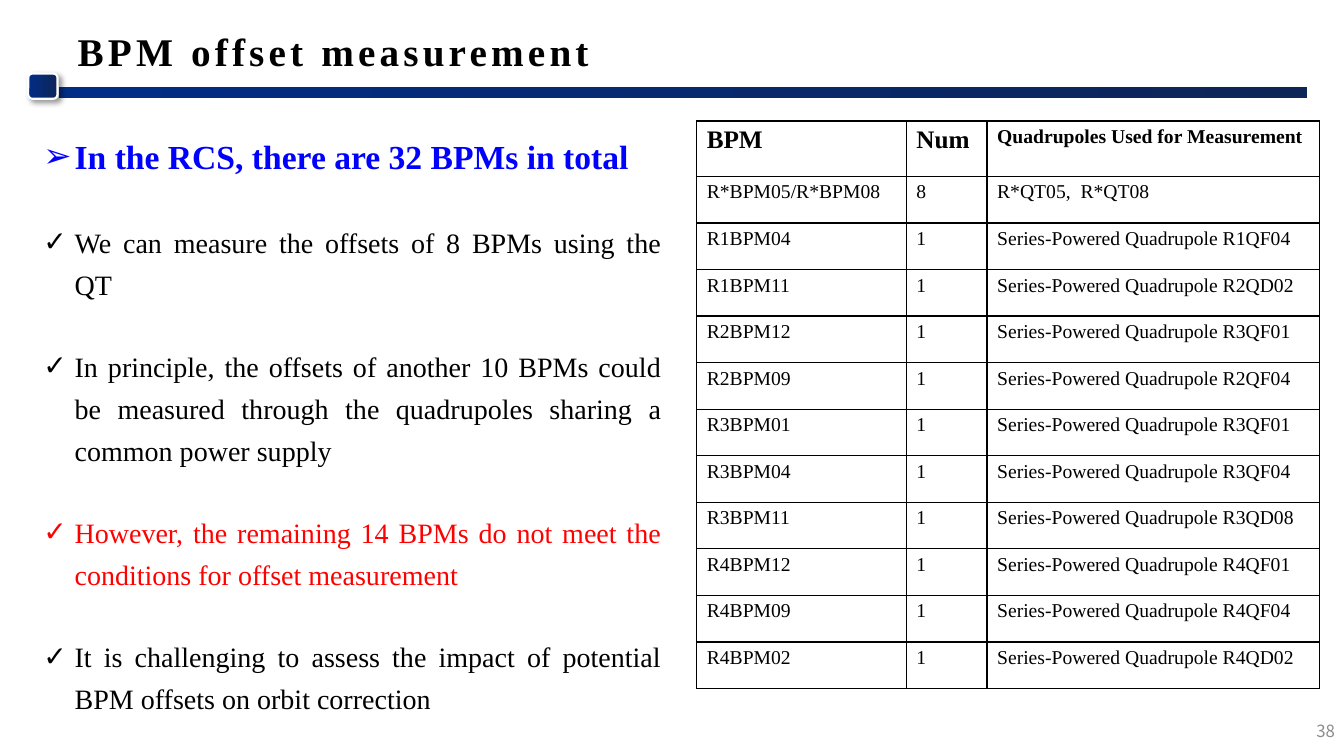
"""Build the BPM offset measurement slide."""
from lxml import etree
from pptx import Presentation
from pptx.dml.color import RGBColor
from pptx.enum.shapes import MSO_SHAPE
from pptx.enum.text import MSO_ANCHOR, MSO_AUTO_SIZE, PP_ALIGN
from pptx.oxml import parse_xml
from pptx.oxml.ns import nsdecls, qn
from pptx.util import Inches, Pt

RECTANGLE, ROUNDED = MSO_SHAPE.RECTANGLE, MSO_SHAPE.ROUNDED_RECTANGLE
TOP, MIDDLE = MSO_ANCHOR.TOP, MSO_ANCHOR.MIDDLE
LEFT, RIGHT, JUSTIFY = PP_ALIGN.LEFT, PP_ALIGN.RIGHT, PP_ALIGN.JUSTIFY
NO_FIT = MSO_AUTO_SIZE.NONE
SERIF, SANS = "Times New Roman", "Noto Sans CJK SC"
BLACK, BLUE, RED = "000000", "0000FF", "FF0000"


def color(code):
    return RGBColor.from_string(code)


def add_run(para, text, size, code=BLACK, bold=False, face=SERIF):
    span = para.add_run()
    span.text = text
    span.font.name = face
    span.font.size = Pt(size)
    span.font.bold = bold
    span.font.color.rgb = color(code)
    return span


deck = Presentation()
deck.slide_width, deck.slide_height = Inches(13.33), Inches(7.5)
page = deck.slides.add_slide(deck.slide_layouts[1])
title, body = page.placeholders

# (shape, left, top, width, height, line width)
header_parts = [
    (RECTANGLE, 0.58, 0.86, 12.39, 0.12, 1),
    (ROUNDED, 0.28, 0.73, 0.29, 0.25, 1.5),
]
for preset, left, top, width, height, line_width in header_parts:
    part = page.shapes.add_shape(
        preset, Inches(left), Inches(top), Inches(width), Inches(height))
    part.shadow.inherit = False
    part.fill.gradient()
    part.fill.gradient_angle = 0
    for stop, position, code in zip(
            part.fill.gradient_stops, (0, 1), ("012D86", "0E2557")):
        stop.position = position
        stop.color.rgb = color(code)
    part.line.color.rgb = color("FFFFFF")
    part.line.width = Pt(line_width)
    if preset == ROUNDED:
        effects = part._element.spPr.find(qn("a:effectLst"))
        effects.append(parse_xml(
            f'<a:outerShdw {nsdecls("a")} blurRad="{Pt(4)}" dist="{Pt(3)}" '
            'dir="2700000" algn="tl" rotWithShape="0"><a:srgbClr val="000000">'
            '<a:alpha val="40000"/></a:srgbClr></a:outerShdw>'))

title.left, title.top = Inches(0.67), Inches(0.19)
title.width, title.height = Inches(10.03), Inches(0.63)
title.text_frame.auto_size = NO_FIT
title.text_frame.vertical_anchor = MIDDLE
title_para = title.text_frame.paragraphs[0]
title_para.alignment = LEFT
title_span = add_run(title_para, "BPM offset measurement", 28, bold=True)
title_span.font._element.set("spc", "300")

points = [
    ("➢", "In the RCS, there are 32 BPMs in total", 24, BLUE, True),
    ("✓", "We can measure the offsets of 8 BPMs using the QT", 20, BLACK, False),
    ("✓", "In principle, the offsets of another 10 BPMs could be measured "
     "through the quadrupoles sharing a common power supply", 20, BLACK, False),
    ("✓", "However, the remaining 14 BPMs do not meet the conditions for "
     "offset measurement", 20, RED, False),
    ("✓", "It is challenging to assess the impact of potential BPM offsets "
     "on orbit correction", 20, BLACK, False),
]
body.left, body.top = Inches(0.33), Inches(1.2)
body.width, body.height = Inches(6.33), Inches(5.43)
frame = body.text_frame
frame.auto_size = NO_FIT
frame.vertical_anchor = TOP
for index, (bullet, text, size, code, bold) in enumerate(points):
    para = frame.add_paragraph() if index else frame.paragraphs[0]
    properties = para._p.get_or_add_pPr()
    properties.set("marL", str(Inches(0.31)))
    properties.set("indent", str(-Inches(0.31)))
    etree.SubElement(properties, qn("a:buChar")).set("char", bullet)
    para.alignment = JUSTIFY
    para.line_spacing = 1.25
    para.space_before = Pt(28.75 if index else 0)
    para.space_after = Pt(0)
    add_run(para, text, size, code, bold)

header = ("BPM", "Num", "Quadrupoles Used for Measurement")
series_powered = [
    ("R1BPM04", "R1QF04"), ("R1BPM11", "R2QD02"), ("R2BPM12", "R3QF01"),
    ("R2BPM09", "R2QF04"), ("R3BPM01", "R3QF01"), ("R3BPM04", "R3QF04"),
    ("R3BPM11", "R3QD08"), ("R4BPM12", "R4QF01"), ("R4BPM09", "R4QF04"),
    ("R4BPM02", "R4QD02"),
]
rows = [header, ("R*BPM05/R*BPM08", "8", "R*QT05,  R*QT08")]
rows += [(monitor, "1", f"Series-Powered Quadrupole {magnet}")
         for monitor, magnet in series_powered]
table = page.shapes.add_table(
    len(rows), len(header), Inches(6.91), Inches(1.2),
    Inches(6.18), Inches(5.63)).table
table.first_row = table.horz_banding = False
for column, width in zip(table.columns, (2.08, 0.8, 3.3)):
    column.width = Inches(width)
for row_index, values in enumerate(rows):
    is_header = row_index == 0
    table.rows[row_index].height = Inches(0.55 if is_header else 0.462)
    for column_index, value in enumerate(values):
        cell = table.cell(row_index, column_index)
        cell_properties = cell._tc.get_or_add_tcPr()
        for side in ("lnL", "lnR", "lnT", "lnB"):
            cell_properties.append(parse_xml(
                f'<a:{side} {nsdecls("a")} w="{Pt(1)}"><a:solidFill>'
                f'<a:srgbClr val="{BLACK}"/></a:solidFill></a:{side}>'))
        cell.fill.background()
        size = 18 if is_header and column_index < 2 else 14
        add_run(cell.text_frame.paragraphs[0], value, size, bold=is_header)

number_box = page.shapes.add_textbox(
    Inches(12.93), Inches(7.07), Inches(0.41), Inches(0.35))
number_box.text_frame.word_wrap = True
number_box.text_frame.vertical_anchor = MIDDLE
number_para = number_box.text_frame.paragraphs[0]
number_para.alignment = RIGHT
add_run(number_para, "38", 12, "8C8C8C", face=SANS)

deck.save("out.pptx")
